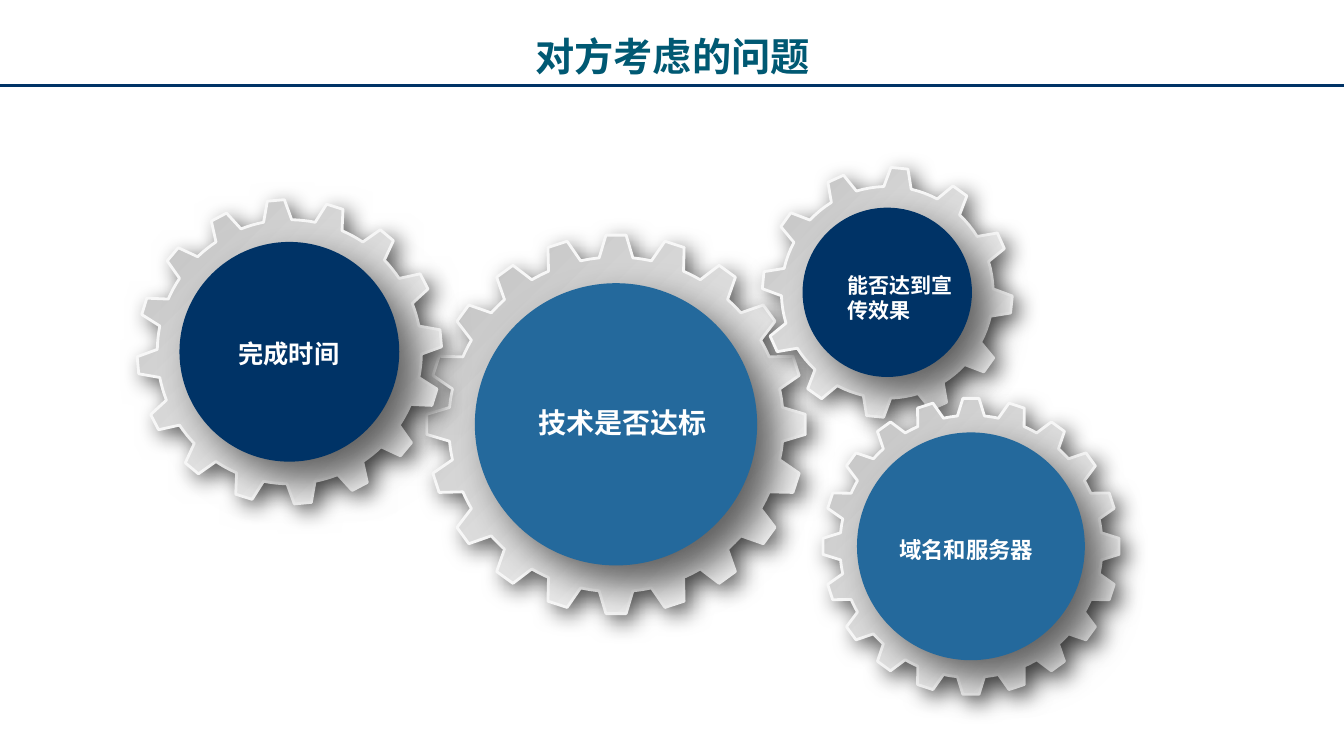
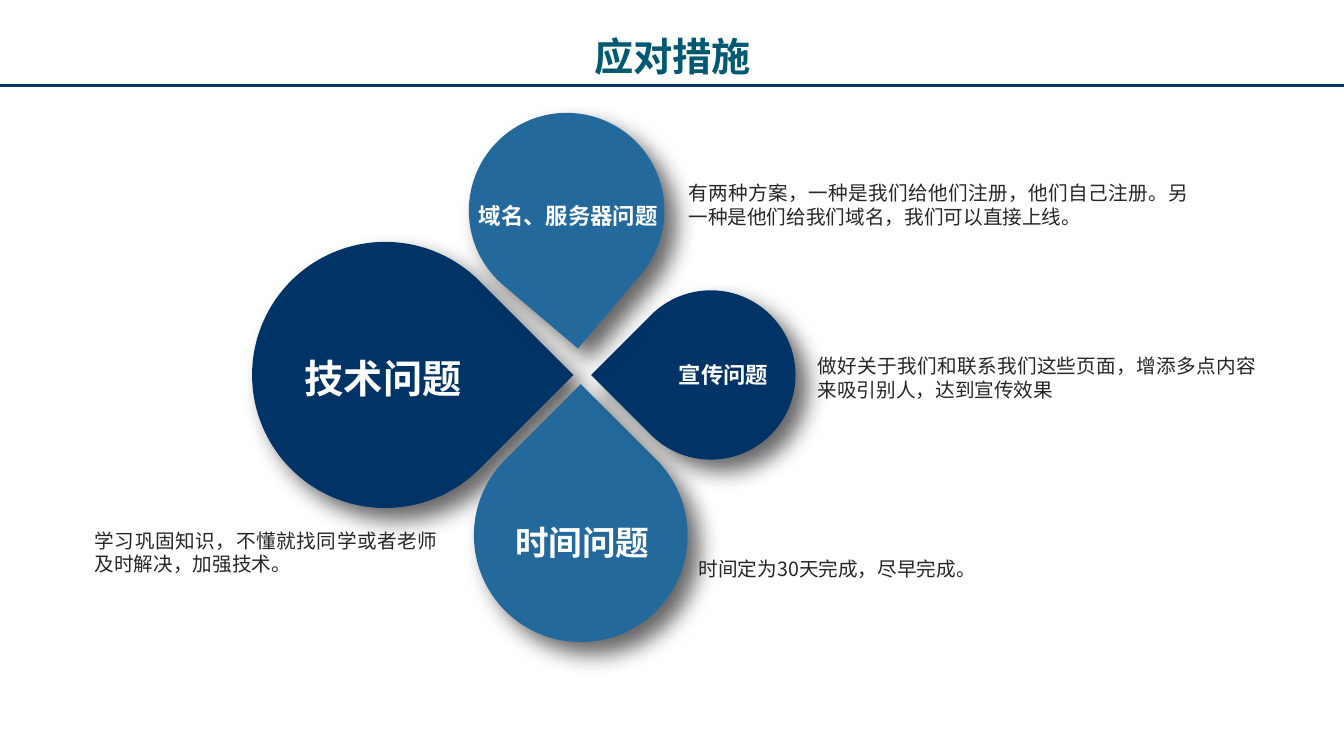
import math

import pptx
import pptx.dml.color
import pptx.enum.dml
import pptx.enum.shapes
import pptx.enum.text
import pptx.oxml
import pptx.oxml.ns
import pptx.util
from lxml import etree
from pptx.util import Inches, Pt

FONT = "Noto Sans CJK SC"
NAVY = "003366"
BLUE = "24699C"
TEAL = "005973"
WHITE = "FFFFFF"
SILVER = "BFBFBF"
EDGE = "F7F7F7"
INK = "262626"
LEFT = pptx.enum.text.PP_ALIGN.LEFT
CENTER = pptx.enum.text.PP_ALIGN.CENTER
JUSTIFY = pptx.enum.text.PP_ALIGN.JUSTIFY
SHAPES = pptx.enum.shapes.MSO_SHAPE
LINE_HEIGHT = 1.2
DROP_PER_POINT = 0.001
ROOT_TO_TIP = 1.9


def color(value):
    return pptx.dml.color.RGBColor.from_string(value)


def qualified(name):
    return pptx.oxml.ns.qn(name)


def write(box, text, size, ink, align, bold):
    frame = box.text_frame
    frame.word_wrap = True
    frame.auto_size = pptx.enum.text.MSO_AUTO_SIZE.NONE
    frame.vertical_anchor = pptx.enum.text.MSO_ANCHOR.MIDDLE
    frame.text = text
    para = frame.paragraphs[0]
    para.alignment = align
    para.line_spacing = Pt(size * LINE_HEIGHT)
    para.space_before = Pt(0)
    for span in para.runs:
        span.font.size = Pt(size)
        span.font.bold = bold
        span.font.color.rgb = color(ink)
        span.font.name = FONT
        latin = span._r.get_or_add_rPr().find(qualified("a:latin"))
        east_asian = etree.Element(qualified("a:ea"))
        east_asian.set("typeface", FONT)
        latin.addnext(east_asian)


def place(box, left, top, width, height, size):
    box.left, box.top = Inches(left), Inches(top + size * DROP_PER_POINT)
    box.width, box.height = Inches(width), Inches(height)


def add_text(page, area, text, size, ink=WHITE, align=CENTER, bold=True):
    box = page.shapes.add_textbox(0, 0, 0, 0)
    place(box, *area, size)
    write(box, text, size, ink, align, bold)


def add_shadow(shape, blur, distance):
    shape.shadow.inherit = False
    effects = shape._element.spPr.find(qualified("a:effectLst"))
    outer = etree.SubElement(
        effects, qualified("a:outerShdw"),
        blurRad=str(Pt(blur)), dist=str(Pt(distance)),
        dir=str(45 * 60000), algn="tl", rotWithShape="0")
    tone = etree.SubElement(outer, qualified("a:srgbClr"), val="000000")
    etree.SubElement(tone, qualified("a:alpha"), val="60000")


def add_round(page, preset, center, radius, fill, shadow, rotation=0):
    x, y = center
    shape = page.shapes.add_shape(
        preset, Inches(x - radius), Inches(y - radius),
        Inches(2 * radius), Inches(2 * radius))
    shape.rotation = rotation
    shape.fill.solid()
    shape.fill.fore_color.rgb = color(fill)
    shape.line.fill.background()
    add_shadow(shape, *shadow)


def gear_points(center, tip, root, teeth, phase, tip_width):
    def polar(radius, angle):
        return (Inches(center[0] + radius * math.sin(angle)),
                Inches(center[1] - radius * math.cos(angle)))

    pitch = math.tau / teeth
    half_tip = tip_width / tip / 2
    half_root = half_tip * ROOT_TO_TIP
    points = []
    for tooth in range(teeth):
        middle = math.radians(phase) + tooth * pitch
        points += [polar(tip, middle - half_tip),
                   polar(tip, middle + half_tip)]
        valley = pitch - 2 * half_root
        points += [polar(root, middle + half_root + valley * step / 4)
                   for step in range(5)]
    return points


def add_gear(page, center, tip, root, teeth, phase, tip_width):
    points = gear_points(center, tip, root, teeth, phase, tip_width)
    builder = page.shapes.build_freeform(*points[0], scale=1.0)
    builder.add_line_segments(points[1:], close=True)
    gear = builder.convert_to_shape()
    gear.fill.gradient()
    gear.fill.gradient_angle = 135
    for stop, shade in zip(gear.fill.gradient_stops, (WHITE, SILVER)):
        stop.color.rgb = color(shade)
    gear.line.color.rgb = color(EDGE)
    gear.line.width = Pt(2)
    add_shadow(gear, 16, 6)


def add_page(deck, title):
    page = deck.slides.add_slide(deck.slide_layouts[5])
    rule = page.shapes.add_connector(
        pptx.enum.shapes.MSO_CONNECTOR.STRAIGHT,
        0, Inches(0.85), deck.slide_width, Inches(0.85))
    rule.line.color.rgb = color(NAVY)
    rule.line.width = Pt(2)
    etree.SubElement(rule._element.spPr, qualified("a:effectLst"))
    place(page.shapes.title, 4.42, 0.24, 4.5, 0.57, 28)
    write(page.shapes.title, title, 28, TEAL, CENTER, True)
    return page


def add_concerns(deck):
    page = add_page(deck, "对方考虑的问题")
    gears = [
        ((6.11, 4.21), 1.88, 1.66, 20, 0, 0.2, 1.4, BLUE),
        ((2.87, 3.49), 1.51, 1.31, 16, -5.1, 0.17, 1.09, NAVY),
        ((8.8, 2.9), 1.24, 1.05, 12, 5.6, 0.17, 0.84, NAVY),
        ((9.63, 5.42), 1.47, 1.3, 20, 0, 0.16, 1.13, BLUE),
    ]
    for center, tip, root, teeth, phase, tip_width, disc, fill in gears:
        add_gear(page, center, tip, root, teeth, phase, tip_width)
        add_round(page, SHAPES.OVAL, center, disc, fill, (30, 20))
    labels = [
        ((5.19, 3.95, 1.97, 0.44), "技术是否达标", 20, CENTER),
        ((1.88, 3.29, 1.97, 0.4), "完成时间", 18, CENTER),
        ((8.31, 2.63, 1.35, 0.61), "能否达到宣传效果", 15, LEFT),
        ((8.82, 5.25, 1.62, 0.37), "域名和服务器", 16, LEFT),
    ]
    for area, text, size, align in labels:
        add_text(page, area, text, size, align=align)


def add_measures(deck):
    page = add_page(deck, "应对措施")
    drops = [
        ((3.82, 3.72), 1.32, NAVY, 45),
        ((5.76, 5.31), 1.06, BLUE, 315),
        ((7.05, 3.72), 0.84, NAVY, 225),
        ((5.62, 2.09), 0.97, BLUE, 130.3),
    ]
    for center, radius, fill, rotation in drops:
        add_round(page, SHAPES.TEAR, center, radius, fill, (16, 12), rotation)
    labels = [
        ((2.71, 3.44, 2.18, 0.57), "技术问题", 28),
        ((4.97, 5.1, 1.61, 0.5), "时间问题", 24),
        ((6.5, 3.52, 1.35, 0.37), "宣传问题", 16),
        ((4.49, 1.94, 2.29, 0.37), "域名、服务器问题", 16),
    ]
    for area, text, size in labels:
        add_text(page, area, text, size)
    answers = [
        ((6.73, 1.73, 5.16, 0.57),
         "有两种方案，一种是我们给他们注册，他们自己注册。"
         "另一种是他们给我们域名，我们可以直接上线。"),
        ((8.01, 3.45, 4.55, 0.57),
         "做好关于我们和联系我们这些页面，增添多点内容来吸引别人，达到宣传效果"),
        ((6.83, 5.46, 4.55, 0.34), "时间定为30天完成，尽早完成。"),
        ((0.84, 5.18, 3.6, 0.57),
         "学习巩固知识，不懂就找同学或者老师及时解决，加强技术。"),
    ]
    for area, text in answers:
        add_text(page, area, text, 14, INK, JUSTIFY, False)


def main():
    deck = pptx.Presentation()
    deck.slide_width = Inches(13.33)
    deck.slide_height = Inches(7.5)
    add_concerns(deck)
    add_measures(deck)
    deck.save("out.pptx")


if __name__ == "__main__":
    main()
